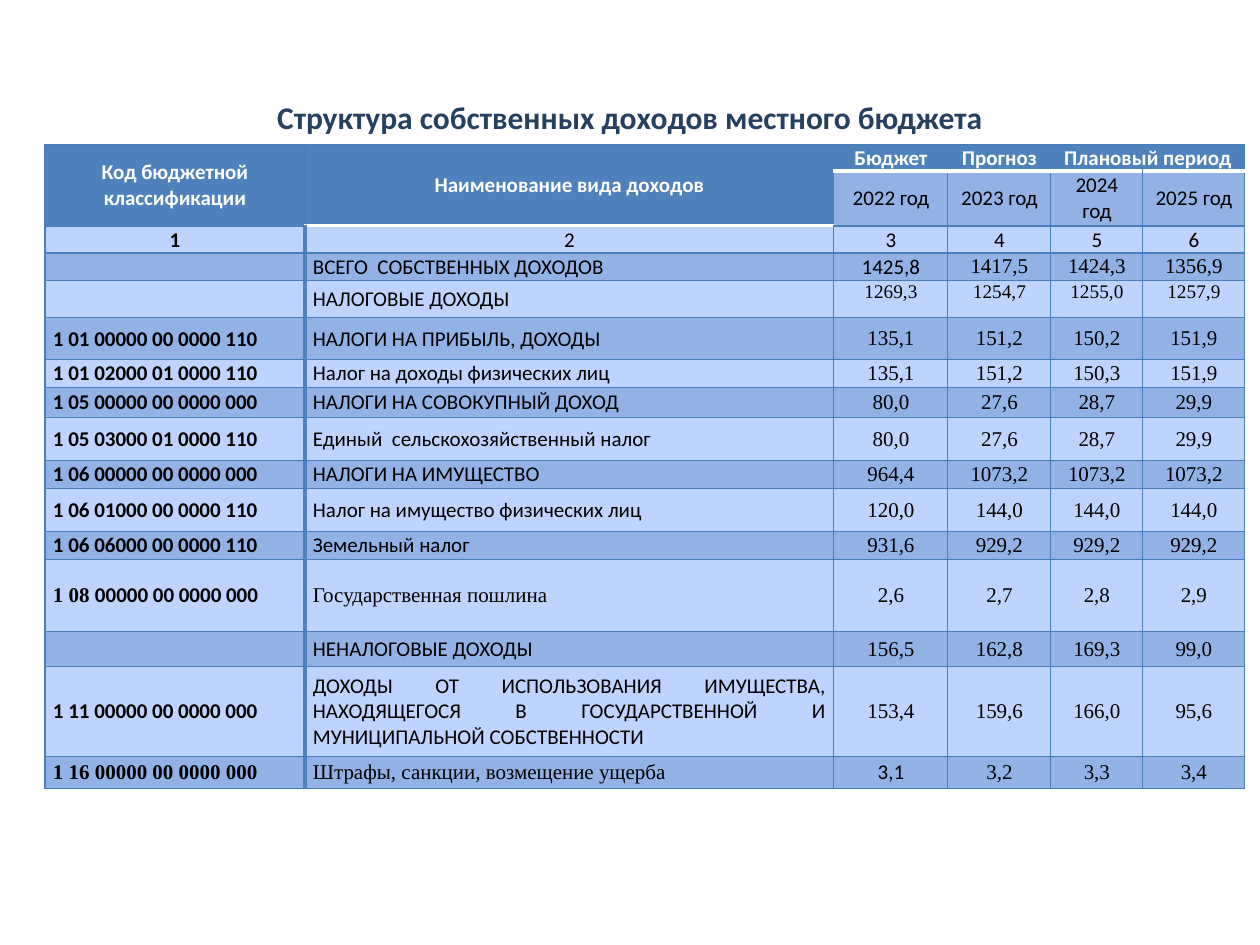
"""Build a slide with a table of the local budget's own revenues."""
import pptx
import pptx.dml.color
import pptx.enum.text
import pptx.oxml
import pptx.oxml.ns
import pptx.util

EMU_PER_PX = 914400 // 126
COLORS = {
    "title": "254061", "header": "4F81BD", "grid": "4B7EBC", "dark": "92B2E5",
    "light": "BFD3FF", "white": "FFFFFF", "text": "000000",
}
SANS, SERIF = "Calibri", "Times New Roman"
ALIGN = pptx.enum.text.PP_ALIGN
ANCHOR = pptx.enum.text.MSO_ANCHOR
COLUMN_WIDTHS = [260, 529, 114, 103, 92, 102]
HEADER_HEIGHTS = [26, 55, 27]
HEADERS = [
    ["Код бюджетной классификации", "Наименование вида доходов", "Бюджет", "Прогноз", "Плановый период", ""],
    ["", "", "2022 год", "2023 год", "2024 год", "2025 год"],
    ["1", "2", "3", "4", "5", "6"],
]
REVENUES = [
    (28, "", "ВСЕГО  СОБСТВЕННЫХ ДОХОДОВ", "1425,8 1417,5 1424,3 1356,9"),
    (37, "", "НАЛОГОВЫЕ ДОХОДЫ", "1269,3 1254,7 1255,0 1257,9"),
    (42, "1 01 00000 00 0000 110", "НАЛОГИ НА ПРИБЫЛЬ, ДОХОДЫ", "135,1 151,2 150,2 151,9"),
    (28, "1 01 02000 01 0000 110", "Налог на доходы физических лиц", "135,1 151,2 150,3 151,9"),
    (30, "1 05 00000 00 0000 000", "НАЛОГИ НА СОВОКУПНЫЙ ДОХОД", "80,0 27,6 28,7 29,9"),
    (43, "1 05 03000 01 0000 110", "Единый  сельскохозяйственный налог", "80,0 27,6 28,7 29,9"),
    (28, "1 06 00000 00 0000 000", "НАЛОГИ НА ИМУЩЕСТВО", "964,4 1073,2 1073,2 1073,2"),
    (43, "1 06 01000 00 0000 110", "Налог на имущество физических лиц", "120,0 144,0 144,0 144,0"),
    (28, "1 06 06000 00 0000 110", "Земельный налог", "931,6 929,2 929,2 929,2"),
    (72, "1 08 00000 00 0000 000", "Государственная пошлина", "2,6 2,7 2,8 2,9"),
    (35, "", "НЕНАЛОГОВЫЕ ДОХОДЫ", "156,5 162,8 169,3 99,0"),
    (90, "1 11 00000 00 0000 000",
     "ДОХОДЫ ОТ ИСПОЛЬЗОВАНИЯ ИМУЩЕСТВА, НАХОДЯЩЕГОСЯ В ГОСУДАРСТВЕННОЙ И МУНИЦИПАЛЬНОЙ СОБСТВЕННОСТИ",
     "153,4 159,6 166,0 95,6"),
    (32, "1 16 00000 00 0000 000", "Штрафы, санкции, возмещение ущерба", "3,1 3,2 3,3 3,4"),
]
SERIF_TEXTS = {"1 16 00000 00 0000 000", "Государственная пошлина", "Штрафы, санкции, возмещение ущерба"}
SANS_VALUES = {"1425,8", "3,1"}


def px(length):
    return pptx.util.Emu(length * EMU_PER_PX)


def rgb(name):
    return pptx.dml.color.RGBColor.from_string(COLORS[name])


class SlideBuilder:
    def __init__(self, presentation):
        self.slide = presentation.slides.add_slide(presentation.slide_layouts[5])

    def add_run(self, paragraph, text, font=SANS, size=12, color="text", bold=False):
        run = paragraph.add_run()
        run.text = text
        run.font.name = font
        run.font.size = pptx.util.Pt(size)
        run.font.bold = bold
        run.font.color.rgb = rgb(color)

    def title(self, text, left, top, width, height):
        shape = self.slide.shapes.title
        shape.left, shape.top, shape.width, shape.height = map(px, (left, top, width, height))
        shape.text_frame.vertical_anchor = ANCHOR.MIDDLE
        paragraph = shape.text_frame.paragraphs[0]
        paragraph.alignment = ALIGN.CENTER
        self.add_run(paragraph, text, size=18, color="title", bold=True)

    def table(self, left, top, widths, heights):
        frame = self.slide.shapes.add_table(
            len(heights), len(widths), px(left), px(top), px(sum(widths)), px(sum(heights)))
        table = frame.table
        table.first_row = table.horz_banding = False
        for column, width in zip(table.columns, widths):
            column.width = px(width)
        for row, height in zip(table.rows, heights):
            row.height = px(height)
        return table

    def cell(self, cell, runs, fill, align=ALIGN.CENTER, anchor=ANCHOR.MIDDLE, inset=8, **style):
        cell.fill.solid()
        cell.fill.fore_color.rgb = rgb(fill)
        cell.margin_left = cell.margin_right = px(inset)
        cell.margin_top = cell.margin_bottom = 0
        cell.vertical_anchor = anchor
        paragraph = cell.text_frame.paragraphs[0]
        paragraph.alignment = align
        for text, font in runs:
            self.add_run(paragraph, text, font, **style)
        if not any(text for text, font in runs):
            paragraph._p.get_or_add_endParaRPr().set("sz", "1200")

    def borders(self, cell, **special):
        properties = cell._tc.get_or_add_tcPr()
        for index, side in enumerate("LRTB"):
            color, points = special.get(side, ("grid", 0.75))
            line = pptx.oxml.parse_xml(
                f'<a:ln{side} {pptx.oxml.ns.nsdecls("a")} w="{int(points * 12700)}">'
                f'<a:solidFill><a:srgbClr val="{COLORS[color]}"/></a:solidFill></a:ln{side}>')
            properties.insert(index, line)


def fill_headers(builder, table):
    for row, texts in enumerate(HEADERS):
        for column, text in enumerate(texts):
            dark_header = row == 0 or (row == 1 and column < 2)
            fill = "header" if dark_header else ("dark" if row == 1 else "light")
            anchor = ANCHOR.BOTTOM if row == 2 or (row == 0 and column > 2) else ANCHOR.MIDDLE
            builder.cell(table.cell(row, column), [(text, SANS)] if text else [], fill, anchor=anchor,
                         color="white" if dark_header else "text",
                         bold=dark_header or text == "1")


def fill_revenues(builder, table):
    for row, (height, code, name, values) in enumerate(REVENUES, len(HEADERS)):
        fill = "dark" if row % 2 else "light"
        code_runs = [(code, SERIF if code in SERIF_TEXTS else SANS)] if code else []
        if code.startswith("1 08 "):
            code_runs = [(code[:5], SERIF), (code[5:], SANS)]
        builder.cell(table.cell(row, 0), code_runs, fill, ALIGN.JUSTIFY, bold=True)
        name_font = SERIF if name in SERIF_TEXTS else SANS
        builder.cell(table.cell(row, 1), [(name, name_font)], fill, ALIGN.JUSTIFY)
        tax_total = name == "НАЛОГОВЫЕ ДОХОДЫ"
        for column, value in enumerate(values.split(), 2):
            font = SANS if value in SANS_VALUES else SERIF
            builder.cell(table.cell(row, column), [(value, font)], fill, inset=8 if tax_total else 1,
                         anchor=ANCHOR.TOP if tax_total else ANCHOR.MIDDLE, size=11 if tax_total else 12)


def draw_borders(builder, table):
    white_below = {(1, 1)} | {(0, column) for column in range(2, 6)}
    for row in range(len(table.rows)):
        for column in range(len(table.columns)):
            special = {}
            if (row, column) in white_below:
                special["B"] = ("white", 2)
            if (row - 1, column) in white_below:
                special["T"] = ("white", 2)
            if row > 1 and column < 2:
                special["R" if column == 0 else "L"] = ("header", 2)
            if row < 2 and column < 2:
                special["B" if row == 0 else "T"] = ("header", 0.75)
            builder.borders(table.cell(row, column), **special)


def main():
    presentation = pptx.Presentation()
    presentation.slide_width, presentation.slide_height = pptx.util.Inches(10), pptx.util.Inches(7.5)
    builder = SlideBuilder(presentation)
    builder.title("Структура собственных доходов местного бюджета", 63, 38, 1134, 158)
    table = builder.table(45, 145, COLUMN_WIDTHS, HEADER_HEIGHTS + [revenue[0] for revenue in REVENUES])
    fill_headers(builder, table)
    fill_revenues(builder, table)
    draw_borders(builder, table)
    for column in range(2):
        table.cell(0, column).merge(table.cell(1, column))
    table.cell(0, 4).merge(table.cell(0, 5))
    presentation.save("out.pptx")


if __name__ == "__main__":
    main()
